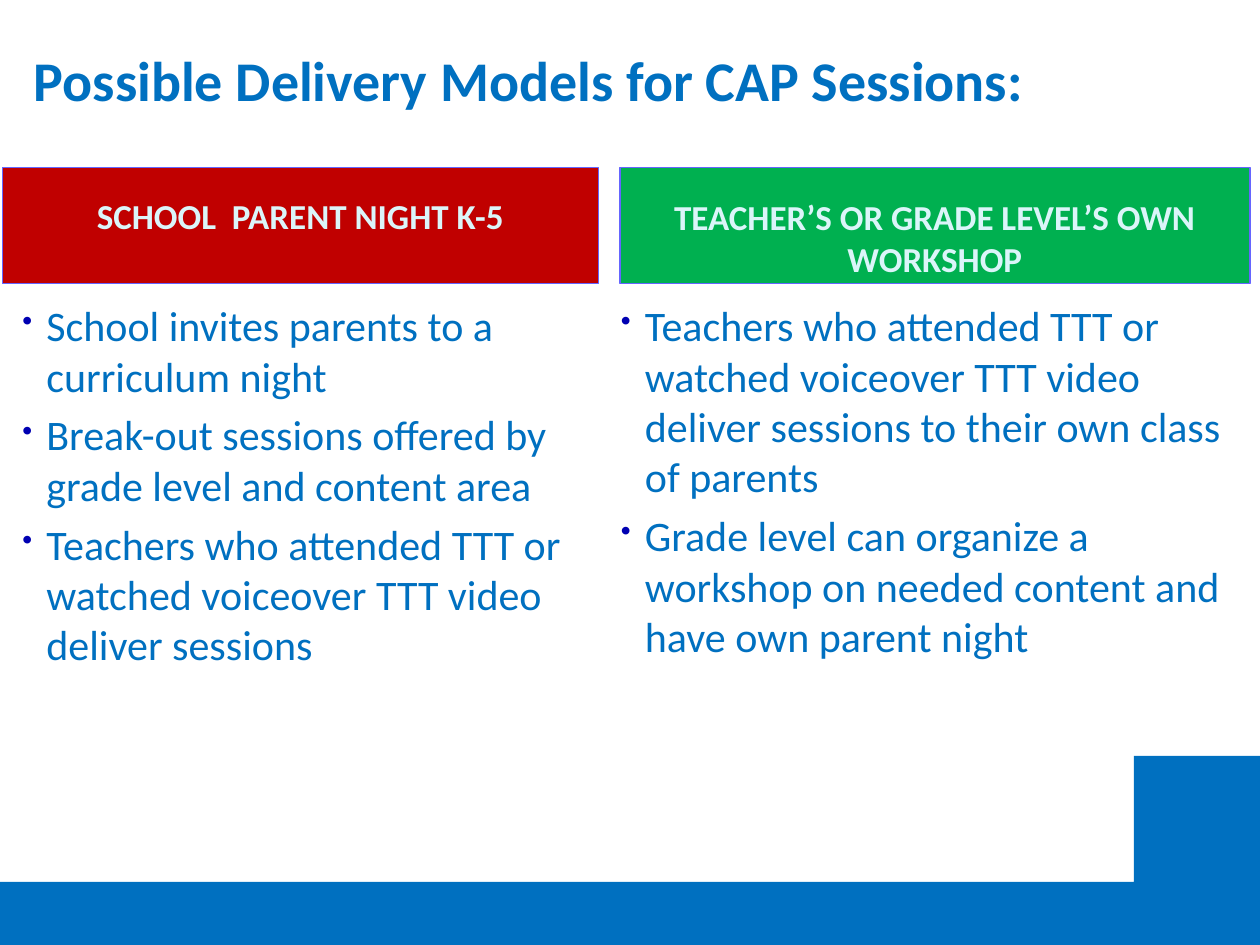
from lxml.etree import SubElement
from pptx import Presentation
from pptx.dml.color import RGBColor
from pptx.enum.shapes import MSO_SHAPE as Shape
from pptx.enum.text import MSO_ANCHOR as Anchor, PP_ALIGN as Align
from pptx.oxml.ns import qn
from pptx.util import Inches, Pt

TITLE = "Possible Delivery Models for CAP Sessions:"
MODELS = [
    {
        "heading": "SCHOOL  PARENT NIGHT K-5",
        "fill": "red",
        "bar": (0.02, 4.73),
        "list": (0.08, 4.75),
        "foot": 0.37,
        "points": [
            "School invites parents to a curriculum night",
            "Break-out sessions offered by grade level and content area",
            "Teachers who attended TTT or watched voiceover TTT video deliver sessions",
        ],
    },
    {
        "heading": "TEACHER’S OR GRADE LEVEL’S OWN WORKSHOP",
        "fill": "green",
        "bar": (4.92, 5),
        "list": (4.83, 5),
        "foot": 0.03,
        "points": [
            "Teachers who attended TTT or watched voiceover TTT video deliver "
            "sessions to their own class of parents",
            "Grade level can organize a workshop on needed content and have own parent night",
        ],
    },
]
THEME = {
    "font": "Calibri",
    "blue": "0070C0", "red": "C00000", "green": "00B050",
    "outline": "6565FF", "pale": "DBF5F9", "bullet": "0000B2",
    "title": 32, "heading": 20, "point": 24,
}
WIDTH, HEIGHT = 10, 7.5
BAR_TOP, BAR_HEIGHT = 1.33, 0.92
LIST_TOP, LIST_HEIGHT = 2.33, 4.4
BULLET_INDENT = 0.19

# Crest of the wave, right to left: start point, then Bezier segments
CREST_START = (10.08, 6.39)
CREST = [
    ((9.36, 6.32), (5.98, 6.98), (4.55, 7.09)),
    ((3.12, 7.2), (2.34, 7.17), (1.5, 7.04)),
    ((0.66, 6.9), (-0.08, 6.65), (-0.08, 6.72)),
]
WAVE_BASE = [(-0.08, 7.55), (10.08, 7.55)]
STEPS = 24


def color(key):
    return RGBColor.from_string(THEME[key])


def bezier(a, b, c, d, t):
    weights = ((1 - t) ** 3, 3 * t * (1 - t) ** 2, 3 * t * t * (1 - t), t ** 3)
    return tuple(sum(w * p[axis] for w, p in zip(weights, (a, b, c, d))) for axis in (0, 1))


def style(paragraph, size, ink, bold=False):
    paragraph.font.color.rgb = color(ink)
    for name, value in {"name": THEME["font"], "size": Pt(THEME[size]), "bold": bold}.items():
        setattr(paragraph.font, name, value)


def add_bullet(paragraph):
    props = paragraph._p.get_or_add_pPr()
    props.set("marL", str(Inches(BULLET_INDENT)))
    props.set("indent", str(-Inches(BULLET_INDENT)))
    tint = SubElement(props, qn("a:buClr"))
    SubElement(tint, qn("a:srgbClr"), val=THEME["bullet"])
    SubElement(props, qn("a:buSzPct"), val="70000")
    SubElement(props, qn("a:buChar"), char="•")


def add_wave(slide):
    crest, start = [], CREST_START
    for first, second, end in CREST:
        crest += [bezier(start, first, second, end, i / STEPS) for i in range(1, STEPS + 1)]
        start = end
    builder = slide.shapes.build_freeform(*CREST_START, scale=Inches(1))
    builder.add_line_segments(crest + WAVE_BASE, close=True)
    wave = builder.convert_to_shape()
    wave.shadow.inherit = False
    wave.fill.solid()
    wave.fill.fore_color.rgb = color("blue")
    wave.line.fill.background()


def add_text_box(slide, left, top, width, height):
    frame = slide.shapes.add_textbox(*map(Inches, (left, top, width, height))).text_frame
    frame.word_wrap = True
    return frame


def add_heading(slide, model):
    left, width = model["bar"]
    bar = slide.shapes.add_shape(Shape.RECTANGLE, *map(Inches, (left, BAR_TOP, width, BAR_HEIGHT)))
    bar.shadow.inherit = False
    bar.fill.solid()
    bar.fill.fore_color.rgb = color(model["fill"])
    bar.line.color.rgb = color("outline")
    bar.line.width = Pt(0.94)
    layout = {"vertical_anchor": Anchor.BOTTOM, "word_wrap": True,
              "margin_top": Inches(0.05), "margin_bottom": Inches(model["foot"])}
    for name, value in layout.items():
        setattr(bar.text_frame, name, value)
    heading = bar.text_frame.paragraphs[0]
    heading.text = model["heading"]
    heading.alignment = Align.CENTER
    style(heading, "heading", "pale", bold=True)


def add_points(slide, model):
    left, width = model["list"]
    frame = add_text_box(slide, left, LIST_TOP, width, LIST_HEIGHT)
    for i, point in enumerate(model["points"]):
        paragraph = frame.add_paragraph() if i else frame.paragraphs[0]
        paragraph.text = point
        if i:
            paragraph.space_before = Pt(0.2 * THEME["point"])
        add_bullet(paragraph)
        style(paragraph, "point", "blue")


def main():
    deck = Presentation()
    deck.slide_width, deck.slide_height = Inches(WIDTH), Inches(HEIGHT)
    slide = deck.slides.add_slide(deck.slide_layouts[6])
    add_wave(slide)
    for model in MODELS:
        add_heading(slide, model)
        add_points(slide, model)
    title = add_text_box(slide, 0.17, 0.17, 9.67, 0.92)
    title.vertical_anchor = Anchor.MIDDLE
    title.paragraphs[0].text = TITLE
    style(title.paragraphs[0], "title", "blue", bold=True)
    deck.save("out.pptx")


if __name__ == "__main__":
    main()
